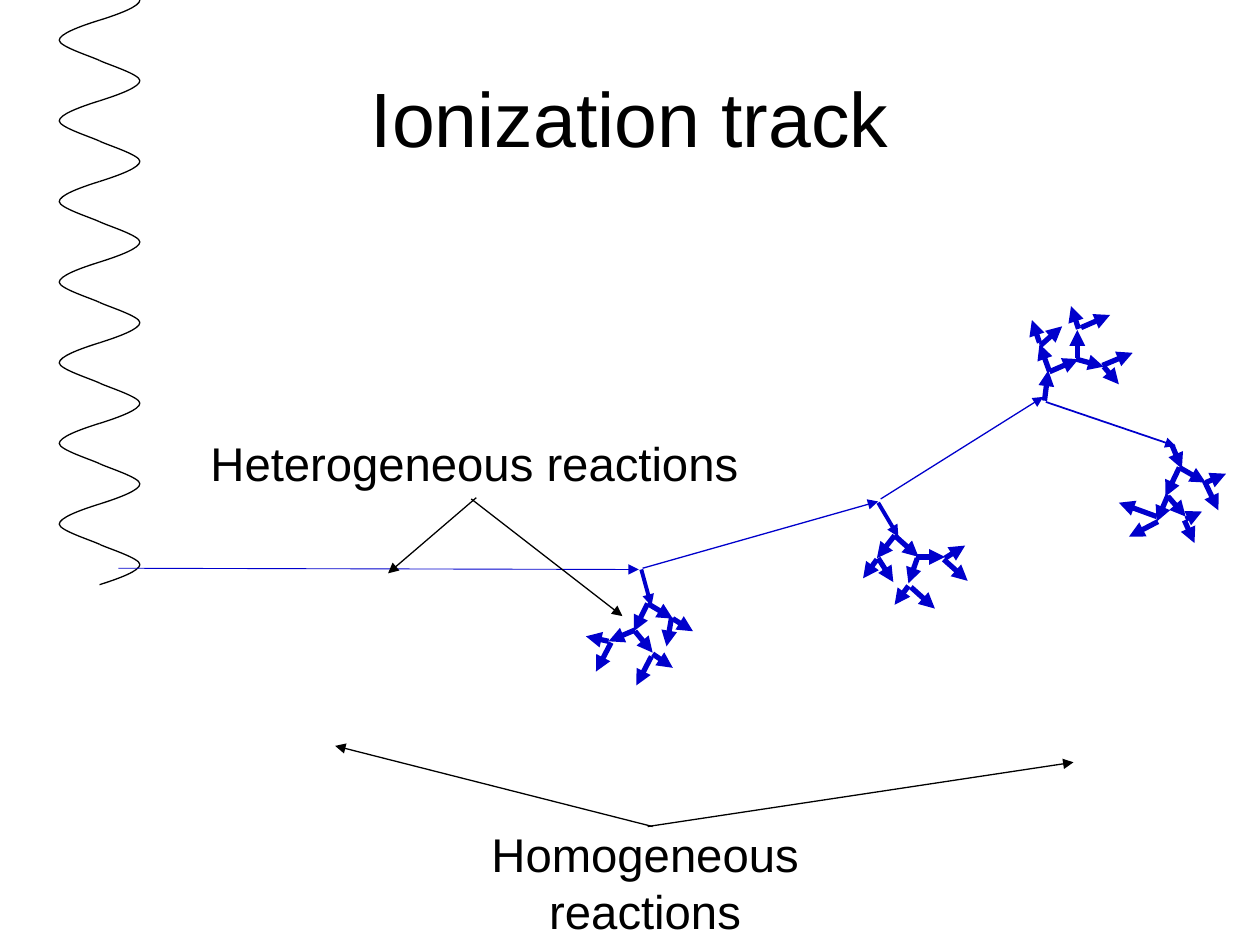
from dataclasses import dataclass

from lxml.etree import SubElement
from pptx import Presentation
from pptx.dml.color import RGBColor
from pptx.enum.shapes import MSO_CONNECTOR
from pptx.enum.text import MSO_ANCHOR, MSO_AUTO_SIZE, PP_ALIGN
from pptx.oxml.ns import qn
from pptx.util import Inches, Pt


@dataclass(frozen=True)
class Theme:
    font: str = "Arial"
    title_size: float = 44
    label_size: float = 27
    ink: RGBColor = RGBColor(0, 0, 0)
    electron: RGBColor = RGBColor(0x00, 0x00, 0xCC)
    thin: float = 0.75
    branch: float = 3


THEME = Theme()

WAVE_X = 0.79
HALF_PERIOD = 0.32
HALF_WAVES = 15
# One half wave as offsets from its centre: a start, then two Bezier curves,
# each with two control points and an end.
HALF_WAVE_START = (0, -0.16)
HALF_WAVE_CURVES = [
    [(0.16, -0.11), (0.32, -0.05), (0.32, 0)],
    [(0.32, 0.05), (0.06, 0.13), (0, 0.16)],
]

# Each arrow: x1, y1, x2, y2, line width.
TRACK = [
    (5.1, 4.51, 6.97, 3.98, 0.75),
    (0.94, 4.51, 5.07, 4.52, 0.5),
    (6.99, 3.96, 8.28, 3.15, 0.75),
    (8.3, 3.19, 9.33, 3.54, 1),
    (5.09, 4.52, 5.17, 4.81, 2.25),
    (8.29, 3.18, 8.32, 2.94, 3),
    (6.97, 3.99, 7.13, 4.26, 2.25),
    (9.3, 3.53, 9.38, 3.72, 3),
]

# Spurs of secondary electrons, each arrow: x1, y1, x2, y2.
SPURS = [
    [(7.1, 4.25, 7.29, 4.42), (7.27, 4.42, 7.5, 4.42),
     (7.28, 4.43, 7.21, 4.63), (7.23, 4.66, 7.42, 4.83),
     (7.1, 4.25, 6.96, 4.43), (7.49, 4.44, 7.68, 4.61),
     (7.5, 4.43, 7.66, 4.33), (6.97, 4.43, 7.09, 4.62),
     (6.96, 4.44, 6.85, 4.59), (7.21, 4.65, 7.1, 4.8)],
    [(5.14, 4.79, 5.03, 5.01), (5.04, 5, 4.83, 5.09),
     (5.04, 5.01, 5.18, 5.18), (5.17, 5.21, 5.05, 5.44),
     (5.14, 4.79, 5.34, 4.91), (4.85, 5.1, 4.73, 5.33),
     (4.83, 5.09, 4.65, 5.05), (5.33, 4.9, 5.29, 5.13),
     (5.34, 4.91, 5.5, 5.01), (5.18, 5.19, 5.34, 5.3)],
    [(8.33, 2.95, 8.56, 2.85), (8.54, 2.85, 8.76, 2.91),
     (8.55, 2.84, 8.55, 2.62), (8.58, 2.6, 8.81, 2.5),
     (8.33, 2.95, 8.25, 2.73), (8.75, 2.9, 8.99, 2.8),
     (8.76, 2.91, 8.88, 3.05), (8.26, 2.74, 8.43, 2.59),
     (8.25, 2.72, 8.19, 2.54), (8.56, 2.61, 8.5, 2.43)],
    [(9.36, 3.71, 9.25, 3.94), (9.27, 3.93, 9.18, 4.14),
     (9.27, 3.94, 9.41, 4.1), (9.4, 4.13, 9.48, 4.31),
     (9.36, 3.71, 9.57, 3.83), (9.19, 4.14, 8.96, 4.26),
     (9.18, 4.1, 8.88, 3.99), (9.56, 3.82, 9.67, 4.05),
     (9.57, 3.83, 9.73, 3.76), (9.41, 4.12, 9.54, 4.06)],
]

# Each label: text, box, arrows.
LABELS = [
    ("Heterogeneous reactions", (1.57, 3.4, 4.39, 0.55),
     [(3.78, 3.95, 3.08, 4.55), (3.74, 3.96, 4.94, 4.89)]),
    ("Homogeneous reactions", (2.99, 6.5, 4.26, 0.55),
     [(5.18, 6.56, 2.66, 5.92), (5.14, 6.56, 8.52, 6.05)]),
]


def write_text(tf, text, size):
    p = tf.paragraphs[0]
    p.alignment = PP_ALIGN.CENTER
    r = p.add_run()
    r.text = text
    r.font.name = THEME.font
    r.font.size = Pt(size)
    r.font.color.rgb = THEME.ink


def add_title(slide, text):
    title = slide.shapes.title
    title.left, title.top = Inches(0.5), Inches(0.3)
    title.width, title.height = Inches(9), Inches(1.25)
    title.text_frame.vertical_anchor = MSO_ANCHOR.MIDDLE
    write_text(title.text_frame, text, THEME.title_size)


def add_arrow(slide, ends, color, width):
    line = slide.shapes.add_connector(MSO_CONNECTOR.STRAIGHT, *map(Inches, ends))
    line.line.color.rgb = color
    line.line.width = Pt(width)
    SubElement(line.line._get_or_add_ln(), qn("a:tailEnd"), type="triangle")
    SubElement(line._element.spPr, qn("a:effectLst"))


def bend_segments(sp, curves):
    """Turn each straight segment of a freeform into a cubic Bezier curve."""
    segments = list(sp._element.iter(qn("a:lnTo")))
    for segment, curve in zip(segments, curves):
        parent = segment.getparent()
        bezier = SubElement(parent, qn("a:cubicBezTo"))
        parent.replace(segment, bezier)
        for x, y in curve:
            SubElement(bezier, qn("a:pt"), x=str(x - sp.left), y=str(y - sp.top))


def add_half_wave(slide, center_y, side):
    """Draw one bulge of the wave, to the right (side 1) or left (side -1)."""
    def place(offset):
        dx, dy = offset
        return Inches(WAVE_X + side * dx), Inches(center_y - side * dy)

    curves = [[place(pt) for pt in curve] for curve in HALF_WAVE_CURVES]
    builder = slide.shapes.build_freeform(*place(HALF_WAVE_START))
    builder.add_line_segments([curve[-1] for curve in curves], close=False)
    sp = builder.convert_to_shape()
    bend_segments(sp, curves)
    sp.shadow.inherit = False
    sp.fill.background()
    sp.line.color.rgb = THEME.ink
    sp.line.width = Pt(THEME.thin)


def add_label(slide, text, box):
    tf = slide.shapes.add_textbox(*map(Inches, box)).text_frame
    tf.word_wrap = False
    tf.auto_size = MSO_AUTO_SIZE.SHAPE_TO_FIT_TEXT
    write_text(tf, text, THEME.label_size)


def main():
    prs = Presentation()
    prs.slide_width, prs.slide_height = Inches(10), Inches(7.5)
    slide = prs.slides.add_slide(prs.slide_layouts[5])
    add_title(slide, "Ionization track")
    for i in range(HALF_WAVES):
        add_half_wave(slide, i * HALF_PERIOD, (-1) ** i)
    for *ends, width in TRACK:
        add_arrow(slide, ends, THEME.electron, width)
    for spur in SPURS:
        for ends in spur:
            add_arrow(slide, ends, THEME.electron, THEME.branch)
    for text, box, arrows in LABELS:
        add_label(slide, text, box)
        for ends in arrows:
            add_arrow(slide, ends, THEME.ink, THEME.thin)
    prs.save("out.pptx")


if __name__ == "__main__":
    main()
